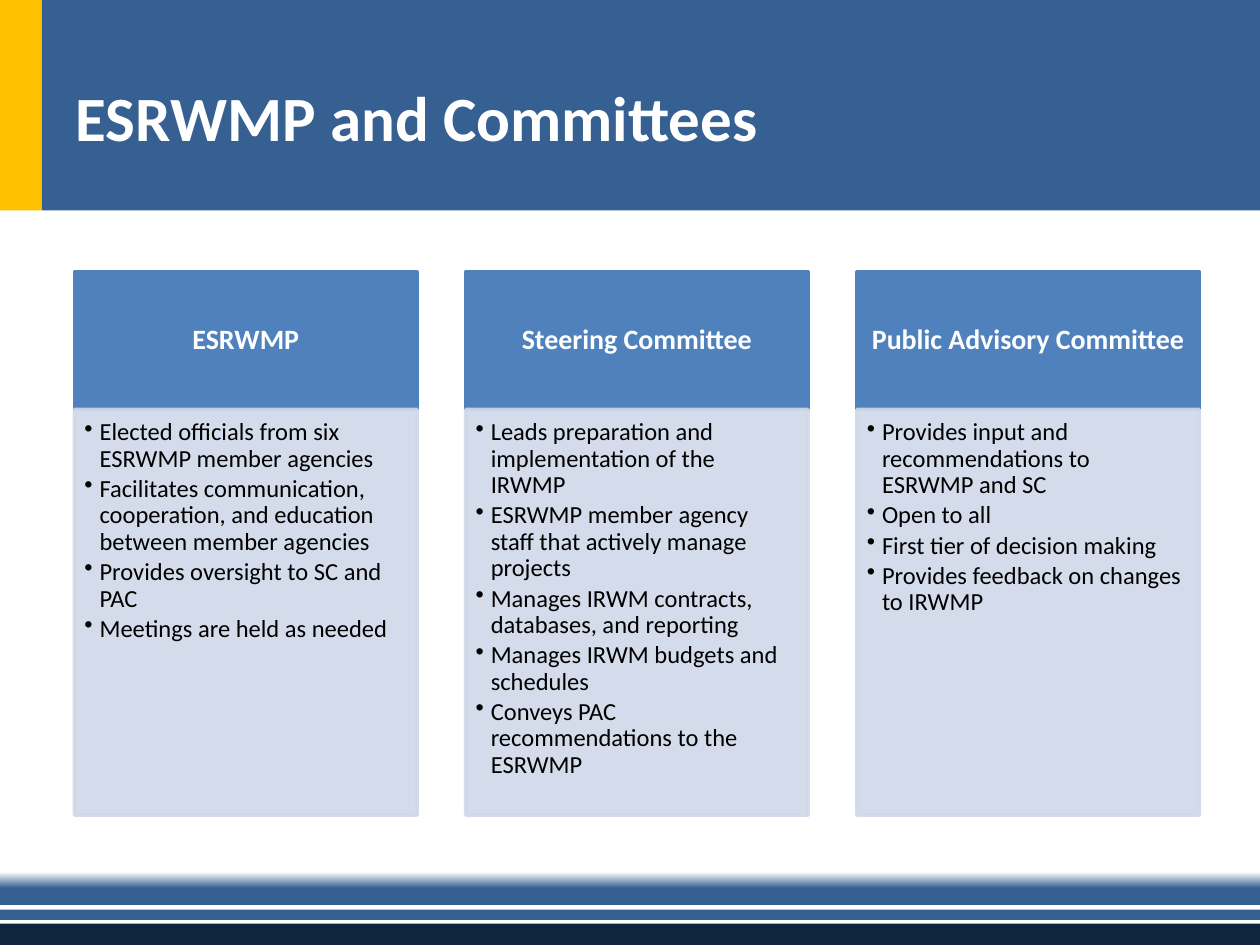
import pptx
import pptx.util
import pptx.dml.color
import pptx.enum.shapes
import pptx.enum.text
import pptx.oxml
import pptx.oxml.ns

Inches, Pt = pptx.util.Inches, pptx.util.Pt
ALIGN, ANCHOR = pptx.enum.text.PP_ALIGN, pptx.enum.text.MSO_ANCHOR
COLORS = {
    "gold": "FFC000",
    "navy": "0F243E",
    "blue": "376092",
    "heading": "4F81BD",
    "panel": "D0D8E8",
    "white": "FFFFFF",
    "black": "000000",
}
NAMESPACE = pptx.oxml.ns.nsdecls("a")


def rgb(name):
    return pptx.dml.color.RGBColor.from_string(COLORS[name])


def add_box(left, top, width, height, color):
    box = slide.shapes.add_shape(
        pptx.enum.shapes.MSO_SHAPE.RECTANGLE,
        Inches(left), Inches(top), Inches(width), Inches(height),
    )
    box.shadow.inherit = False
    box.fill.solid()
    box.fill.fore_color.rgb = rgb(color)
    box.line.fill.background()
    return box


deck = pptx.Presentation()
deck.slide_width, deck.slide_height = Inches(10), Inches(7.5)
slide = deck.slides.add_slide(deck.slide_layouts[5])

for left, top, width, height, color in [
    (0, 0, 0.33, 1.67, "gold"),
    (0.33, 0, 9.67, 1.67, "blue"),
    (0, 7.33, 10, 0.17, "navy"),
    (0, 7.22, 10, 0.08, "blue"),
]:
    add_box(left, top, width, height, color)

footer_fade = add_box(0, 6.92, 10, 0.26, "blue")
footer_fade.fill.gradient()
footer_fade.fill.gradient_angle = 270
for stop, position, color in zip(footer_fade.fill.gradient_stops, (0, 0.5), ("white", "blue")):
    stop.position = position
    stop.color.rgb = rgb(color)

title = slide.shapes.title
title.element.getparent().append(title.element)
title.left, title.top, title.width, title.height = Inches(0.5), Inches(0.3), Inches(9), Inches(1.25)
title.text_frame.text = "ESRWMP and Committees"
title.text_frame.vertical_anchor = ANCHOR.MIDDLE
title_line = title.text_frame.paragraphs[0]
title_line.alignment = ALIGN.LEFT
title_line.font.name = "Calibri"
title_line.font.size = Pt(36)
title_line.font.bold = True
title_line.font.color.rgb = rgb("white")

committees = {
    "ESRWMP": [
        "Elected officials from six ESRWMP member agencies",
        "Facilitates communication, cooperation, and education between member agencies",
        "Provides oversight to SC and PAC",
        "Meetings are held as needed",
    ],
    "Steering Committee": [
        "Leads preparation and implementation of the IRWMP",
        "ESRWMP member agency staff that actively manage projects",
        "Manages IRWM contracts, databases, and reporting",
        "Manages IRWM budgets and schedules",
        "Conveys PAC recommendations to the ESRWMP",
    ],
    "Public Advisory Committee": [
        "Provides input and recommendations to ESRWMP and SC",
        "Open to all",
        "First tier of decision making",
        "Provides feedback on changes to IRWMP",
    ],
}
first_left, column_width, gap = 0.59, 2.72, 0.385
heading_top, heading_height, duties_height = 2.16, 1.09, 3.22

for column, (committee, duties) in enumerate(committees.items()):
    left = first_left + column * (column_width + gap)
    heading = add_box(left, heading_top, column_width, heading_height, "heading")
    panel = add_box(left, heading_top + heading_height, column_width, duties_height, "panel")

    for box, lines, color, text_color, size, insets, anchor in [
        (heading, [committee], "heading", "white", 16, (0.12, 0.07, 0.12, 0.07), ANCHOR.MIDDLE),
        (panel, duties, "panel", "black", 14, (0.08, 0.08, 0.11, 0.12), ANCHOR.TOP),
    ]:
        box.line.color.rgb = rgb(color)
        box.line.width = Pt(2)
        frame = box.text_frame
        frame.word_wrap = True
        frame.vertical_anchor = anchor
        frame.margin_left, frame.margin_top, frame.margin_right, frame.margin_bottom = map(Inches, insets)
        frame.text = "\n".join(lines)
        for paragraph in frame.paragraphs:
            paragraph.alignment = ALIGN.CENTER if box is heading else ALIGN.LEFT
            paragraph.line_spacing = 0.9
            paragraph.space_after = Pt(5.6 if box is heading else 2.1)
            if box is panel:
                paragraph.level = 1
                properties = paragraph._p.get_or_add_pPr()
                properties.set("marL", str(Inches(0.12)))
                properties.set("indent", str(-Inches(0.12)))
                properties.append(pptx.oxml.parse_xml(f'<a:buChar {NAMESPACE} char="•"/>'))
            paragraph.font.name = "Calibri"
            paragraph.font.size = Pt(size)
            paragraph.font.bold = box is heading
            paragraph.font.color.rgb = rgb(text_color)

    for panel_color in panel.element.spPr.iter(pptx.oxml.ns.qn("a:srgbClr")):
        panel_color.append(pptx.oxml.parse_xml(f'<a:alpha {NAMESPACE} val="90000"/>'))

deck.save("out.pptx")
